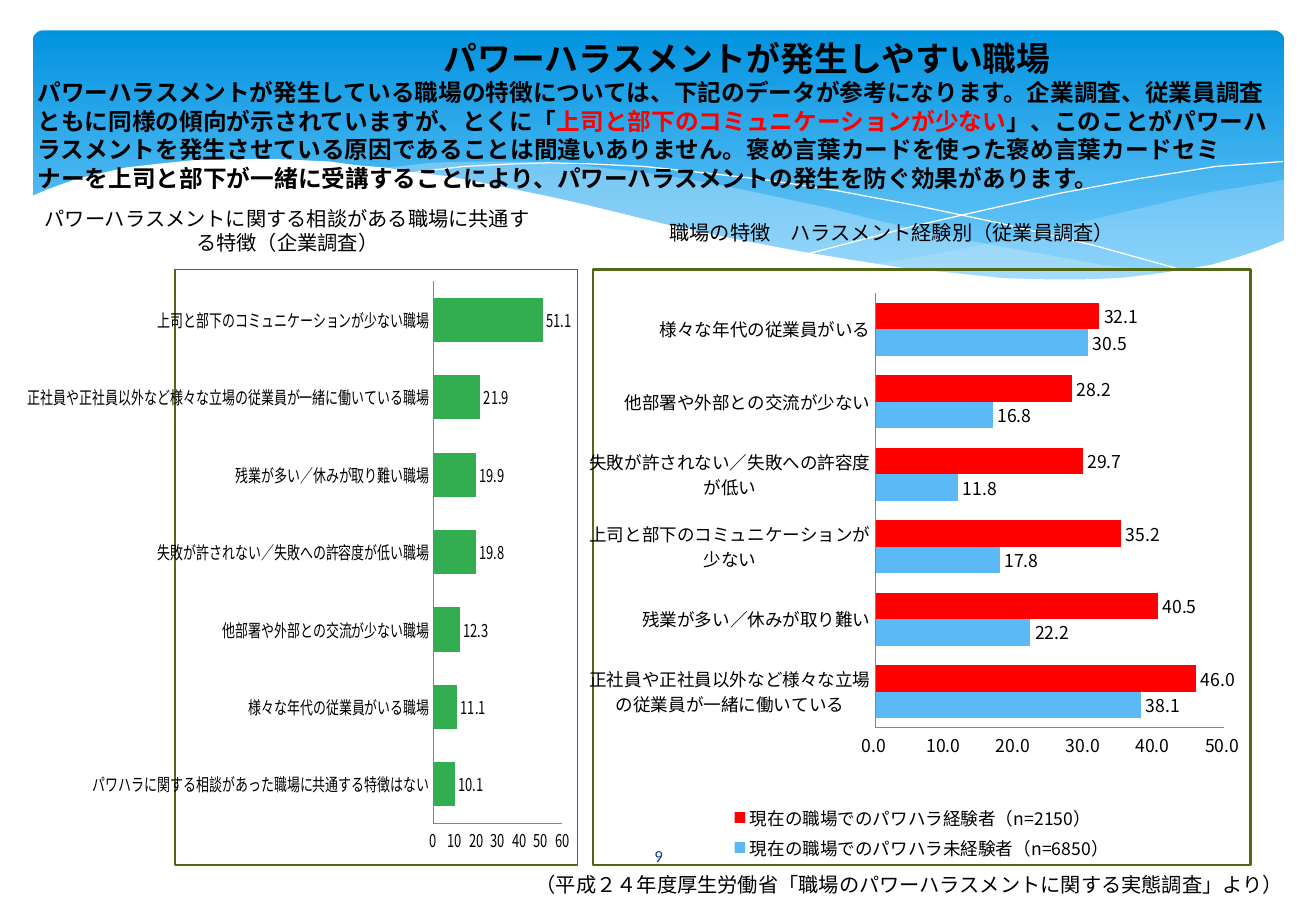
from lxml import etree
from pptx import Presentation
from pptx.chart.data import CategoryChartData
from pptx.dml.color import RGBColor
from pptx.enum.chart import XL_CHART_TYPE, XL_LABEL_POSITION, XL_LEGEND_POSITION, XL_TICK_MARK
from pptx.enum.shapes import MSO_SHAPE
from pptx.enum.text import MSO_ANCHOR, MSO_AUTO_SIZE, PP_ALIGN
from pptx.oxml import parse_xml
from pptx.oxml.ns import nsdecls, qn
from pptx.util import Inches, Pt

BAR = XL_CHART_TYPE.BAR_CLUSTERED
OUTSIDE = XL_LABEL_POSITION.OUTSIDE_END
BOTTOM = XL_LEGEND_POSITION.BOTTOM
NO_TICK = XL_TICK_MARK.NONE
ROUNDED = MSO_SHAPE.ROUNDED_RECTANGLE
TOP, MIDDLE = MSO_ANCHOR.TOP, MSO_ANCHOR.MIDDLE
LEFT, CENTER = PP_ALIGN.LEFT, PP_ALIGN.CENTER
FIXED_SIZE = MSO_AUTO_SIZE.NONE

GOTHIC, SERIF, LATIN = "Noto Sans CJK JP", "TeX Gyre Schola", "Calibri"
BLACK, RED, WHITE, PALE, GREY = "000000", "FF0000", "FFFFFF", "C6E7FC", "868686"

RIGHT_GLOW = [
    (10.57, 1.48), (10.28, 1.53), (9.97, 1.58), (9.66, 1.65), (9.32, 1.73), (8.72, 1.87),
    (8.16, 2), (7.65, 2.1), (7.16, 2.18), (7.48, 2.22), (7.78, 2.26), (8.07, 2.28),
    (8.46, 2.31), (8.82, 2.31), (9.15, 2.3), (9.45, 2.28), (9.72, 2.23), (9.98, 2.18),
    (10.21, 2.12), (10.43, 2.04), (10.57, 1.99)]
MIDDLE_GLOW = [
    (9.67, 2.26), (9.38, 2.22), (9.07, 2.18), (8.74, 2.12), (8.4, 2.06), (8.03, 1.99),
    (7.65, 1.91), (7.24, 1.82), (6.81, 1.71), (6.48, 1.64), (6.16, 1.57), (5.86, 1.51),
    (5.57, 1.46), (5.29, 1.42), (5.03, 1.39), (4.78, 1.36), (4.32, 1.33), (3.91, 1.33),
    (3.55, 1.34), (3.1, 1.39), (3.5, 1.44), (3.92, 1.51), (4.38, 1.6), (4.87, 1.71),
    (5.31, 1.82), (5.74, 1.91), (6.14, 2), (6.51, 2.07), (6.87, 2.14), (7.21, 2.19),
    (7.53, 2.23), (7.83, 2.27), (8.24, 2.3), (8.62, 2.32), (9.08, 2.32), (9.39, 2.29)]
FALLING_LINE = [
    (3.35, 1.43), (3.56, 1.4), (3.82, 1.37), (4.2, 1.35), (4.51, 1.34), (4.88, 1.35),
    (5.3, 1.37), (5.77, 1.42), (6.3, 1.48), (6.89, 1.57), (7.53, 1.69), (8.24, 1.84),
    (9, 2.02), (9.83, 2.25)]
RISING_LINE = [
    (6.65, 2.09), (7.07, 1.98), (7.53, 1.86), (8.1, 1.73), (8.73, 1.59), (9.38, 1.47),
    (9.7, 1.42), (10.01, 1.37), (10.3, 1.35), (10.56, 1.33)]
WHITE_WAVE = [
    (10.59, 1.97), (10.39, 2.05), (10.18, 2.12), (9.97, 2.18), (9.74, 2.22), (9.48, 2.26),
    (9.21, 2.29), (8.92, 2.3), (8.6, 2.3), (8.25, 2.29), (7.87, 2.25), (7.46, 2.21),
    (7.01, 2.14), (6.53, 2.06), (6.01, 1.96), (5.45, 1.84), (4.84, 1.69), (4.53, 1.62),
    (4.24, 1.56), (3.95, 1.5), (3.68, 1.45), (3.42, 1.42), (3.17, 1.38), (2.93, 1.36),
    (2.71, 1.33), (2.29, 1.31), (1.91, 1.31), (1.58, 1.32), (1.29, 1.35), (1.03, 1.38),
    (0.82, 1.43), (0.64, 1.47), (0.5, 1.52), (0.39, 1.56), (0.25, 1.62), (0.25, 2.86),
    (10.59, 2.86)]

COMPANY_ROWS = [
    ("パワハラに関する相談があった職場に共通する特徴はない", 10.1),
    ("様々な年代の従業員がいる職場", 11.1),
    ("他部署や外部との交流が少ない職場", 12.3),
    ("失敗が許されない／失敗への許容度が低い職場", 19.8),
    ("残業が多い／休みが取り難い職場", 19.9),
    ("正社員や正社員以外など様々な立場の従業員が一緒に働いている職場", 21.9),
    ("上司と部下のコミュニケーションが少ない職場", 51.1)]
EMPLOYEE_ROWS = [
    ("正社員や正社員以外など様々な立場の従業員が一緒に働いている", 38.1, 46.0),
    ("残業が多い／休みが取り難い", 22.2, 40.5),
    ("上司と部下のコミュニケーションが少ない", 17.8, 35.2),
    ("失敗が許されない／失敗への許容度が低い", 11.8, 29.7),
    ("他部署や外部との交流が少ない", 16.8, 28.2),
    ("様々な年代の従業員がいる", 30.5, 32.1)]


def rgb(value):
    """Turn a hex string into a colour."""
    return RGBColor.from_string(value)


def add_banner(s):
    """Draw the rounded banner with its vertical gradient."""
    sp = s.shapes.add_shape(ROUNDED, Inches(0.27), Inches(0.25), Inches(10.3), Inches(2.53))
    sp.adjustments[0] = 0.034
    sp.shadow.inherit = False
    sp.line.fill.background()
    sp.fill.gradient()
    sp.fill.gradient_angle = 270
    for stop, (position, color) in zip(sp.fill.gradient_stops, [(0, "0293E0"), (0.9, "83D3FE")]):
        stop.position = position
        stop.color.rgb = rgb(color)


def add_wave(s, points, fill=None, opacity=100):
    """Draw a filled wave, or a thin white curve when there is no fill."""
    (x, y), *rest = [(Inches(px), Inches(py)) for px, py in points]
    builder = s.shapes.build_freeform(x, y)
    builder.add_line_segments(rest, close=fill is not None)
    sp = builder.convert_to_shape()
    sp.shadow.inherit = False
    if fill is None:
        sp.fill.background()
        sp.line.color.rgb = rgb(WHITE)
        sp.line.width = Pt(0)
        return
    sp.line.fill.background()
    sp.fill.solid()
    sp.fill.fore_color.rgb = rgb(fill)
    if opacity < 100:
        color = sp.fill._xPr.find(".//" + qn("a:srgbClr"))
        etree.SubElement(color, qn("a:alpha")).set("val", str(opacity * 1000))


def add_run(p, text, size, font, color=BLACK, bold=False):
    """Add one formatted run to a paragraph and return it."""
    r = p.add_run()
    r.text = text
    r.font.size, r.font.name, r.font.bold = Pt(size), font, bold
    r.font.color.rgb = rgb(color)
    return r


def add_title(s):
    """Fill the title placeholder with the indented heading and the summary."""
    sp = s.shapes.title
    sp.left, sp.top, sp.width, sp.height = [Inches(v) for v in (0.21, 0.25, 10.32, 1.39)]
    tf = sp.text_frame
    tf.word_wrap = True
    tf.auto_size = FIXED_SIZE
    tf.vertical_anchor = MIDDLE
    p = tf.paragraphs[0]
    p.alignment = LEFT
    p._p.get_or_add_pPr().set("indent", str(Inches(3.34)))
    for text, size, color in (
            ("パワーハラスメントが発生しやすい職場", 20, BLACK),
            ("パワーハラスメントが発生している職場の特徴については、下記のデータが参考になります。"
             "企業調査、従業員調査ともに同様の傾向が示されていますが、とくに「", 14, BLACK),
            ("上司と部下のコミュニケーションが少ない", 14, RED),
            ("」、このことがパワーハラスメントを発生させている原因であることは間違いありません。"
             "褒め言葉カードを使った褒め言葉カードセミナーを上司と部下が一緒に受講することにより、"
             "パワーハラスメントの発生を防ぐ効果があります。", 14, BLACK)):
        r = add_run(p, text, size, SERIF, color, True)
        east_asian = etree.Element(qn("a:ea"), typeface=SERIF)
        r.font._rPr.find(qn("a:latin")).addnext(east_asian)
        if size == 20:
            p.add_line_break()


def add_text(s, box, text, size=12, font=GOTHIC, color=BLACK, align=LEFT, anchor=TOP):
    """Add a text box holding one paragraph."""
    tf = s.shapes.add_textbox(*[Inches(v) for v in box]).text_frame
    tf.word_wrap = True
    tf.vertical_anchor = anchor
    p = tf.paragraphs[0]
    p.alignment = align
    p.line_spacing = Pt(size * 1.23)
    add_run(p, text, size, font, color)


def add_bars(s, box, rows, series, top, number_format="General"):
    """Add a framed bar chart with value labels and return it."""
    data = CategoryChartData()
    data.categories = [row[0] for row in rows]
    for i, (name, _) in enumerate(series, 1):
        data.add_series(name, [row[i] for row in rows])
    chart = s.shapes.add_chart(BAR, *[Inches(v) for v in box], data).chart
    chart.has_title = chart.has_legend = False
    chart.font.size, chart.font.name = Pt(10.5), GOTHIC
    chart.font.color.rgb = rgb(BLACK)
    frame = parse_xml(
        f'<c:spPr {nsdecls("c", "a")}><a:noFill/><a:ln w="{Pt(1.25)}"><a:solidFill>'
        '<a:srgbClr val="526814"/></a:solidFill></a:ln></c:spPr>')
    chart.element.find(qn("c:txPr")).addprevious(frame)
    for axis in (chart.category_axis, chart.value_axis):
        axis.has_major_gridlines = False
        axis.major_tick_mark = axis.minor_tick_mark = NO_TICK
        axis.format.line.color.rgb = rgb(GREY)
    axis.minimum_scale, axis.maximum_scale, axis.major_unit = 0, top, 10
    axis.tick_labels.number_format = number_format
    axis.tick_labels.number_format_is_linked = False
    plot = chart.plots[0]
    plot.gap_width, plot.vary_by_categories = 75, False
    for bars, (_, color) in zip(plot.series, series):
        bars.format.fill.solid()
        bars.format.fill.fore_color.rgb = rgb(color)
        labels = bars.data_labels
        labels.show_value, labels.position = True, OUTSIDE
        labels.number_format, labels.number_format_is_linked = number_format, False
    return chart


def add_employee_chart(s):
    """Add the two-series chart with its legend and fixed plot area."""
    series = [("現在の職場でのパワハラ未経験者（n=6850）", "5BBAF6"),
              ("現在の職場でのパワハラ経験者（n=2150）", RED)]
    chart = add_bars(s, (4.85, 2.21, 5.45, 4.92), EMPLOYEE_ROWS, series, 50, "0.0_ ")
    chart.category_axis.tick_labels.font.size = Pt(10.5)
    chart.has_legend = True
    chart.legend.position, chart.legend.include_in_layout = BOTTOM, False
    sizes = "".join(f'<c:{k} val="{v}"/>' for k, v in
                    (("x", 0.43), ("y", 0.04), ("w", 0.53), ("h", 0.73)))
    layout = parse_xml(
        f'<c:layout {nsdecls("c")}><c:manualLayout><c:layoutTarget val="inner"/>'
        f'<c:xMode val="edge"/><c:yMode val="edge"/>{sizes}</c:manualLayout></c:layout>')
    area = chart.element.find(".//" + qn("c:plotArea"))
    for old in area.findall(qn("c:layout")):
        area.remove(old)
    area.insert(0, layout)


def main():
    """Build the slide and save it."""
    prs = Presentation()
    prs.slide_width, prs.slide_height = Inches(10.83), Inches(7.5)
    s = prs.slides.add_slide(prs.slide_layouts[5])
    add_banner(s)
    add_wave(s, RIGHT_GLOW, PALE, 29)
    add_wave(s, MIDDLE_GLOW, PALE, 40)
    add_wave(s, FALLING_LINE)
    add_wave(s, RISING_LINE)
    add_wave(s, WHITE_WAVE, WHITE)
    add_title(s)
    s.shapes._spTree.append(s.shapes.title._element)
    add_bars(s, (0.23, 2.21, 4.53, 4.92), COMPANY_ROWS, [("Series 1", "32AE51")], 60)
    add_employee_chart(s)
    add_text(s, (0.23, 1.64, 4.27, 0.5),
             "パワーハラスメントに関する相談がある職場に共通する特徴（企業調査）", align=CENTER)
    add_text(s, (5.41, 1.76, 4.61, 0.3), "職場の特徴　ハラスメント経験別（従業員調査）")
    add_text(s, (4.31, 7.13, 6.4, 0.3),
             "（平成２４年度厚生労働省「職場のパワーハラスメントに関する実態調査」より）", font=LATIN)
    add_text(s, (4.73, 6.84, 1.38, 0.4), "9", 10, LATIN, "073E87", CENTER, MIDDLE)
    prs.save("out.pptx")


if __name__ == "__main__":
    main()
